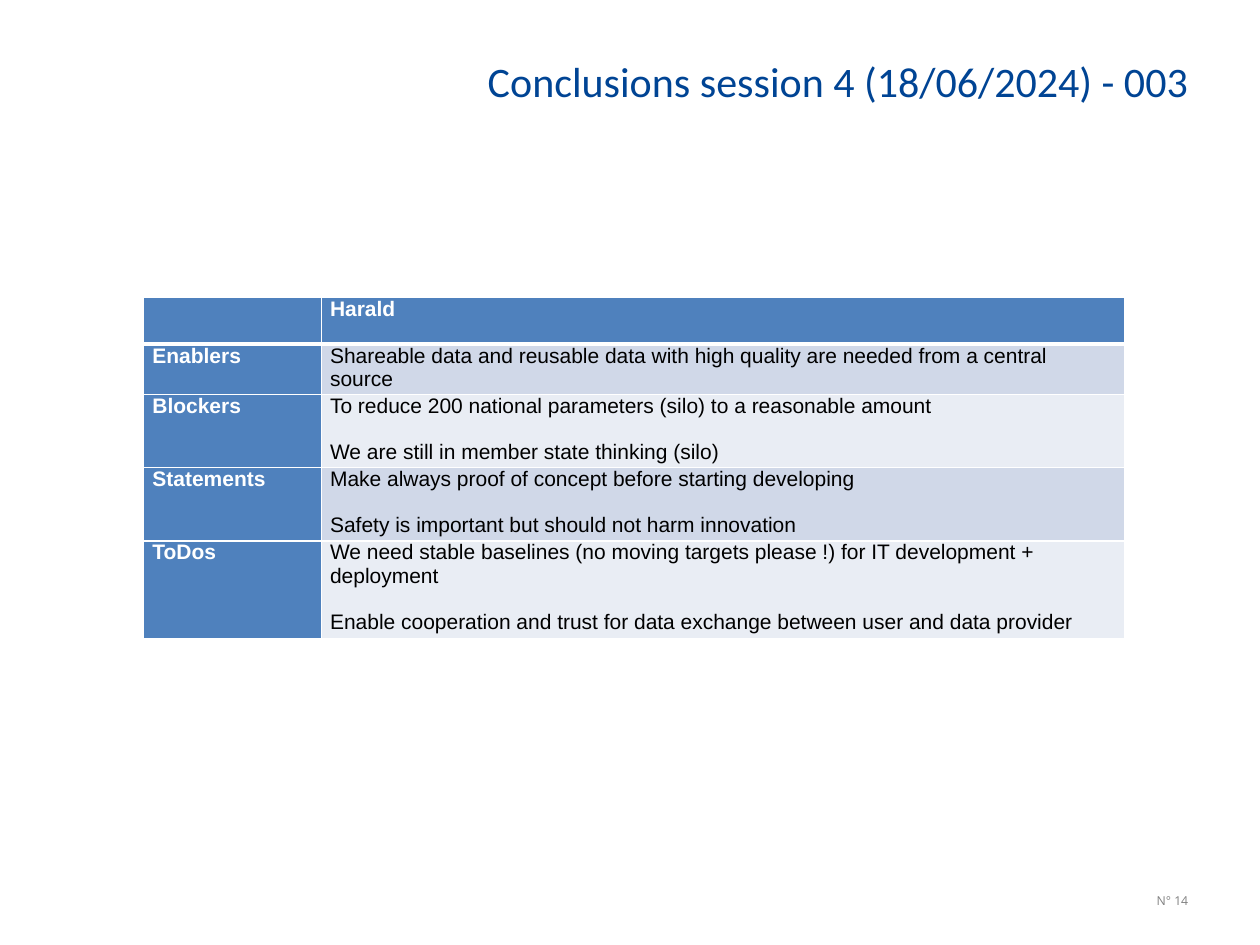
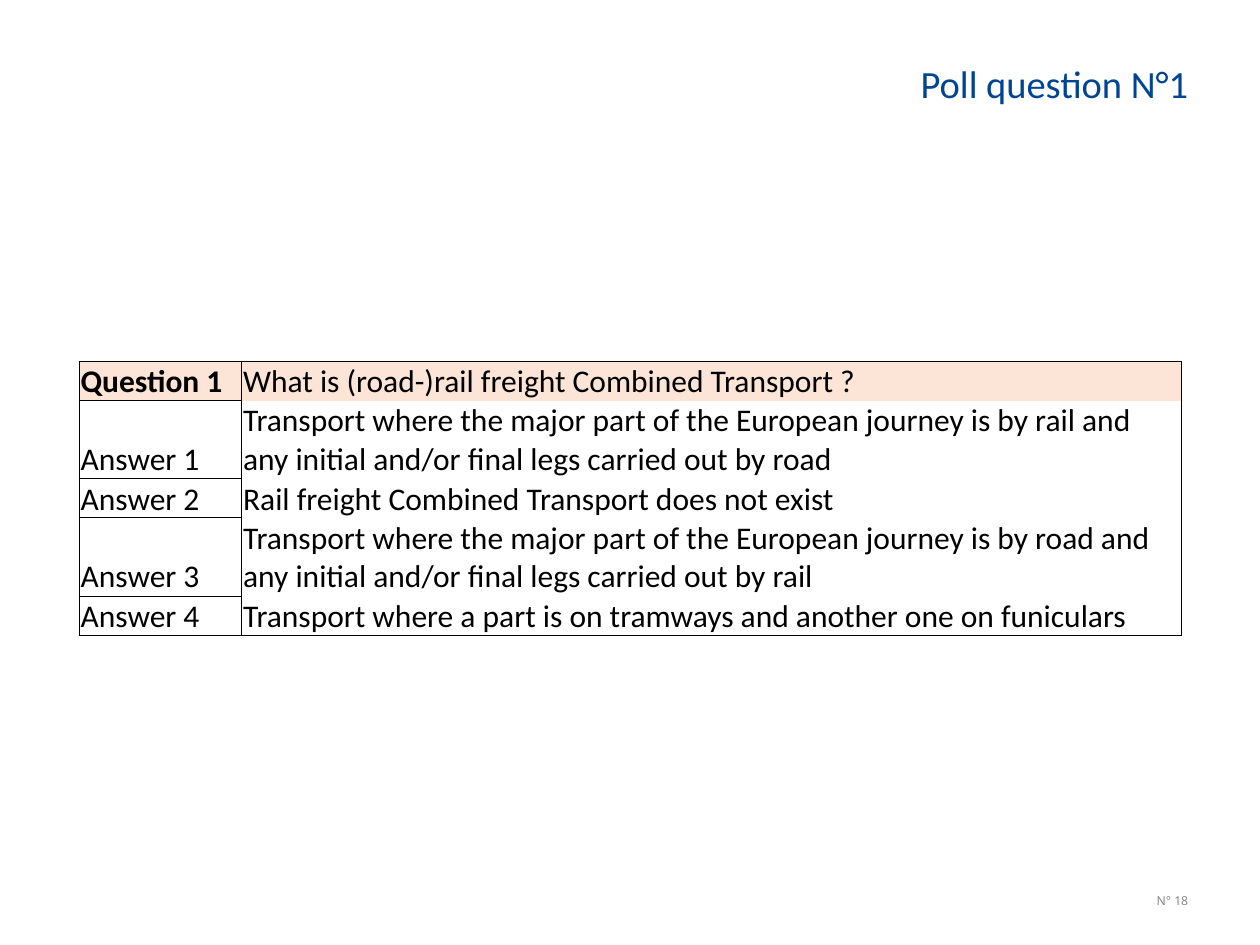
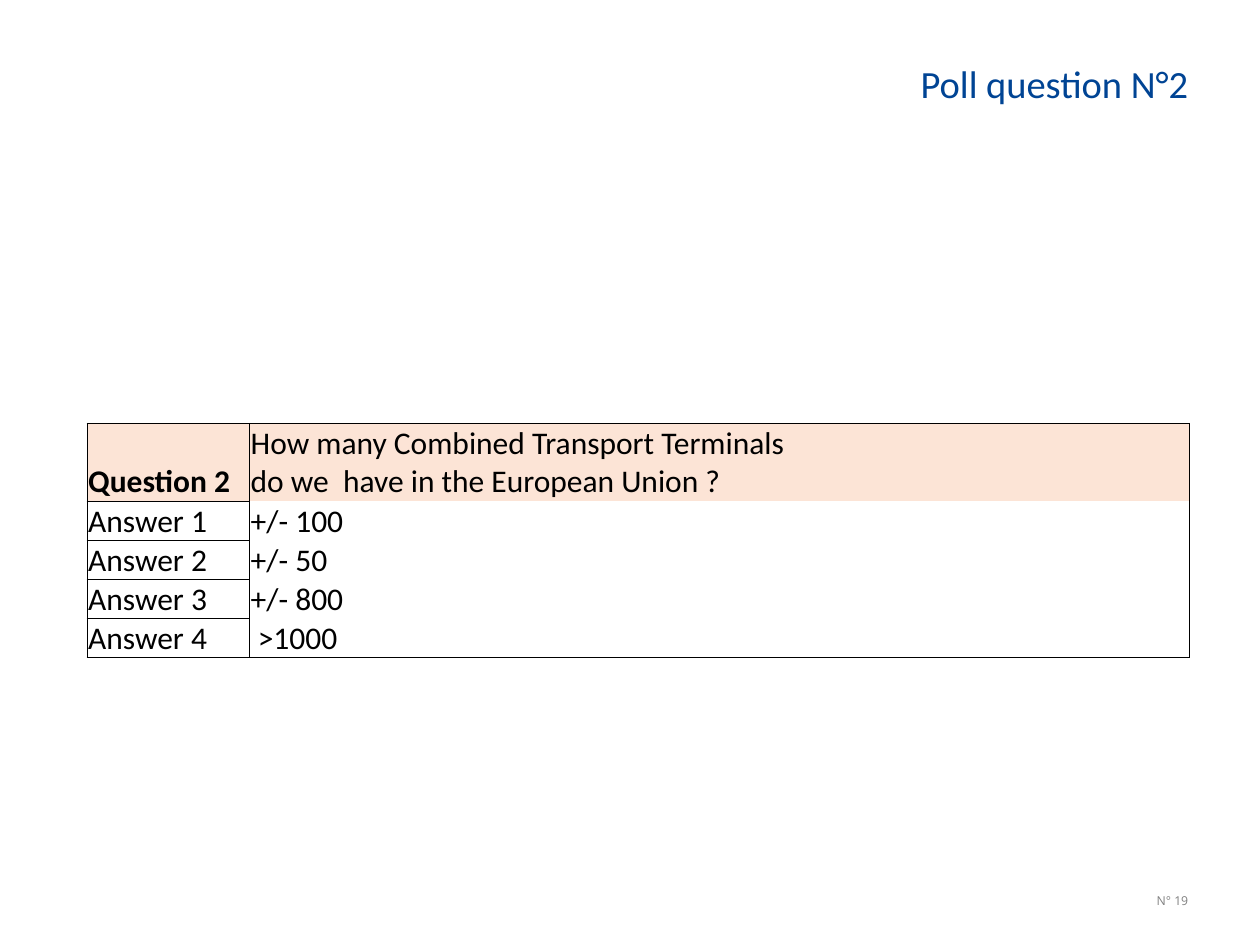
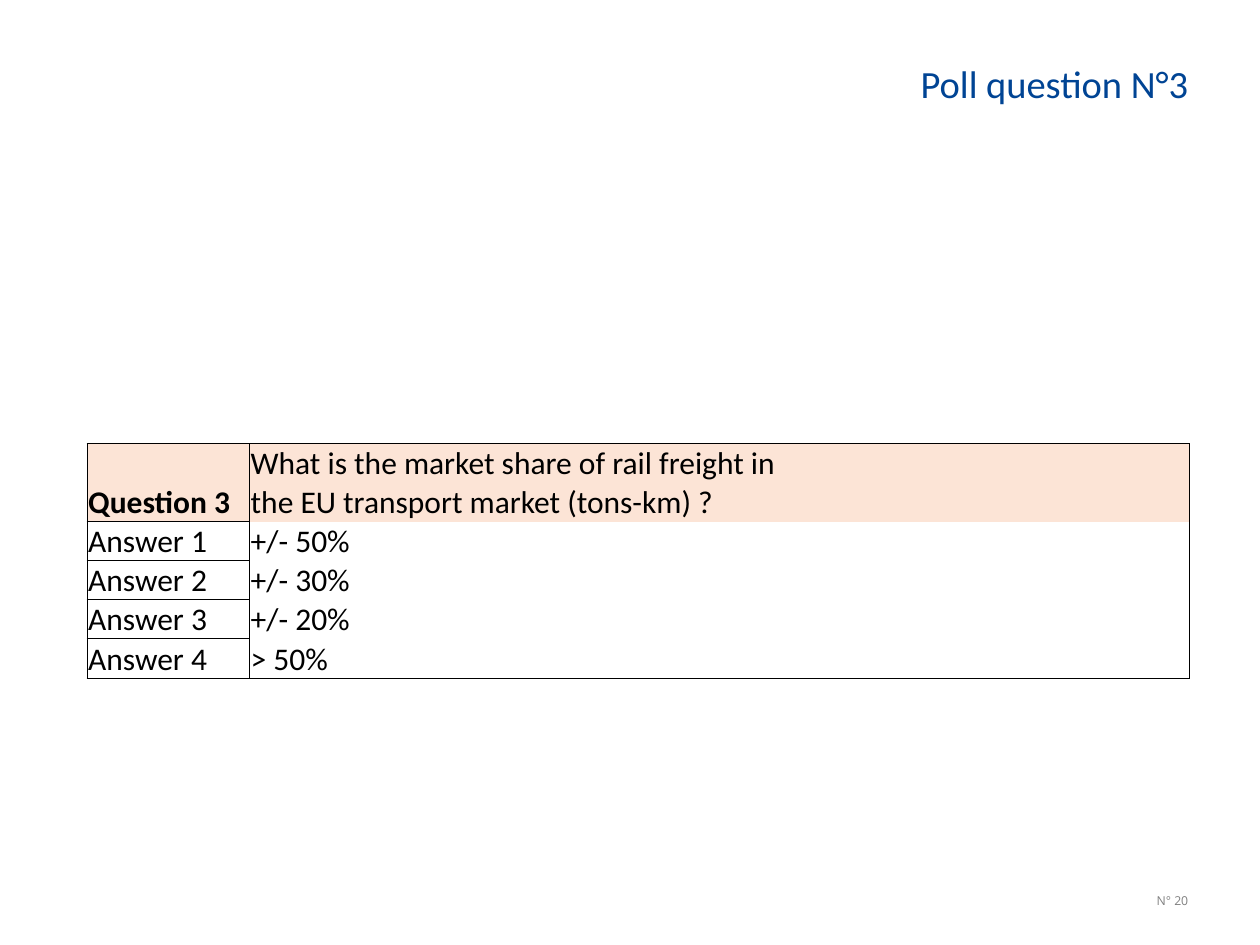
from pptx import Presentation
from pptx.dml.color import RGBColor
from pptx.enum.text import MSO_ANCHOR, PP_ALIGN
from pptx.oxml.ns import qn
from pptx.util import Inches, Pt
from lxml import etree

RIGHT, LEFT = PP_ALIGN.RIGHT, PP_ALIGN.LEFT
TOP, BOTTOM = MSO_ANCHOR.TOP, MSO_ANCHOR.BOTTOM

# Content
NOTES = {
    "title": "Conclusions session 4 (18/06/2024) - 003",
    "page": 14,
    "rows": [
        ("", ["Harald"], 0.37),
        ("Enablers", ["Shareable data and reusable data with high quality are needed from a central source"], 0.37),
        ("Blockers", ["To reduce 200 national parameters (silo) to a reasonable amount",
                      "We are still in member state thinking (silo)"], 0.56),
        ("Statements", ["Make always proof of concept before starting developing",
                        "Safety is important but should not harm innovation"], 0.56),
        ("ToDos", ["We need stable baselines (no moving targets please !) for IT development + deployment",
                   "Enable cooperation and trust for data exchange between user and data provider"], 0.74),
    ],
}
WIDE, SPLIT = [1.29, 7.46], [1.29, 4.48, 0.94, 0.85, 1.19]

# Each poll row: text and number of lines
POLLS = [
    {"page": 18, "at": (0.63, 2.87), "cols": WIDE, "rows": [
        ("What is (road-)rail freight Combined Transport ?", 1),
        ("Transport where the major part of the European journey is by rail and "
         "any initial and/or final legs carried out by road", 2),
        ("Rail freight Combined Transport does not exist", 1),
        ("Transport where the major part of the European journey is by road and "
         "any initial and/or final legs carried out by rail", 2),
        ("Transport where a part is on tramways and another one on funiculars", 1)]},
    {"page": 19, "at": (0.69, 3.36), "cols": SPLIT, "rows": [
        ("How many Combined Transport Terminals do we  have in the European Union ?", 2),
        ("+/- 100", 1), ("+/- 50", 1), ("+/- 800", 1), (" >1000", 1)]},
    {"page": 20, "at": (0.69, 3.52), "cols": SPLIT, "rows": [
        ("What is the market share of rail freight in the EU transport market (tons-km) ?", 2),
        ("+/- 50%", 1), ("+/- 30%", 1), ("+/- 20%", 1), ("> 50%", 1)]},
]

# Shared style
HEX = {"navy": "004494", "gray": "808080", "blue": "4F81BD", "pale": "D0D8E8",
       "mist": "E9EDF4", "peach": "FCE4D6", "white": "FFFFFF", "black": "000000"}
TITLE = {"name": "Calibri", "size": Pt(22), "color": "navy"}
FOOT = {"name": "Open Sans", "size": Pt(7), "color": "gray"}
NOTE = {"name": "Arial", "size": Pt(12), "color": "black", "bold": False}
HEAD = {**NOTE, "color": "white", "bold": True}
POLL = {"name": "Calibri", "size": Pt(18), "color": "black", "bold": False}
LINE = 0.31    # height of one poll line
GAP = Pt(13)   # space between two notes


def write(frame, texts, form, align=LEFT):
    for i, text in enumerate(texts):
        para = frame.paragraphs[0] if i == 0 else frame.add_paragraph()
        para.alignment = align
        if i:
            para.space_before = GAP
        font = para.add_run().font
        para.runs[0].text = text
        for key, val in form.items():
            if key == "color":
                font.color.rgb = RGBColor.from_string(HEX[val])
            else:
                setattr(font, key, val)


def set_frame(frame, wrap):
    frame.word_wrap = wrap
    frame.vertical_anchor = BOTTOM
    frame.margin_left = frame.margin_right = 0
    frame.margin_top = frame.margin_bottom = 0


def add_page(deck, title, page, form=TITLE):
    slide = deck.slides.add_slide(deck.slide_layouts[5])
    head = slide.shapes.title
    head.left, head.top, head.width, head.height = map(Inches, (1.44, 0.23, 7.99, 0.61))
    set_frame(head.text_frame, False)
    write(head.text_frame, [title], form, RIGHT)
    foot = slide.shapes.add_textbox(*map(Inches, (8.32, 7.05, 1.11, 0.16)))
    set_frame(foot.text_frame, True)
    write(foot.text_frame, [f"N° {page}"], FOOT, RIGHT)
    return slide


def add_grid(slide, at, cols, rows):
    size = sum(cols), sum(rows)
    grid = slide.shapes.add_table(len(rows), len(cols), *map(Inches, at + size)).table
    grid.first_row = grid.horz_banding = False
    for col, wide in zip(grid.columns, cols):
        col.width = Inches(wide)
    for row, high in zip(grid.rows, rows):
        row.height = Inches(high)
    return grid


def style(cell, fill, pads, anchor, edges, color):
    """Edges maps each side (L, R, T, B) to a width in points, 0 for none."""
    cell.fill.solid()
    cell.fill.fore_color.rgb = RGBColor.from_string(HEX[fill])
    cell.vertical_anchor = anchor
    for side, pad in zip(("left", "top", "right", "bottom"), pads):
        setattr(cell, f"margin_{side}", Inches(pad))
    props = cell._tc.get_or_add_tcPr()
    for i, side in enumerate("LRTB"):
        line = etree.Element(qn(f"a:ln{side}"), w=str(Pt(edges[side])))
        if edges[side]:
            paint = etree.SubElement(line, qn("a:solidFill"))
            etree.SubElement(paint, qn("a:srgbClr"), val=HEX[color])
        else:
            etree.SubElement(line, qn("a:noFill"))
        props.insert(i, line)


def add_notes(deck):
    slide = add_page(deck, NOTES["title"], NOTES["page"], {**TITLE, "size": Pt(24)})
    rows = NOTES["rows"]
    grid = add_grid(slide, (1.14, 2.36), [1.41, 6.38], [high for *_, high in rows])
    for r, (label, texts, _) in enumerate(rows):
        for c, part in enumerate(([label] if label else [], texts)):
            cell = grid.cell(r, c)
            dark = r == 0 or c == 0
            fill = "blue" if dark else ("mist", "pale")[r % 2]
            edges = {"L": 1, "R": 1, "T": 3 if r == 1 else 1, "B": 3 if r == 0 else 1}
            style(cell, fill, (0.07, 0, 0.07, 0), TOP, edges, "white")
            write(cell.text_frame, part, HEAD if dark else NOTE)


def add_poll(deck, num, poll):
    slide = add_page(deck, f"Poll question N°{num}", poll["page"])
    rows, cols = poll["rows"], poll["cols"]
    grid = add_grid(slide, poll["at"], cols, [LINE * lines for _, lines in rows])
    last, end = len(rows) - 1, len(cols) - 1
    for r, (text, _) in enumerate(rows):
        if r and end > 1:
            grid.cell(r, 1).merge(grid.cell(r, end))
        label = f"Answer {r}" if r else f"Question {num}"
        for c in range(len(cols)):
            cell = grid.cell(r, c)
            # Only the label column and the outer frame are ruled
            ruled = {"L": c <= 1, "R": c in (0, end) or cell.is_merge_origin,
                     "T": c == 0 or r == 0, "B": c == 0 or r == last}
            edges = {side: 0.5 if on else 0 for side, on in ruled.items()}
            style(cell, "white" if r else "peach", (0.01, 0.01, 0.01, 0), BOTTOM, edges, "black")
        write(grid.cell(r, 0).text_frame, [label], {**POLL, "bold": r == 0})
        write(grid.cell(r, 1).text_frame, [text], POLL)


def main():
    deck = Presentation()
    deck.slide_width, deck.slide_height = Inches(10), Inches(7.5)
    add_notes(deck)
    for num, poll in enumerate(POLLS, 1):
        add_poll(deck, num, poll)
    deck.save("out.pptx")


if __name__ == "__main__":
    main()
